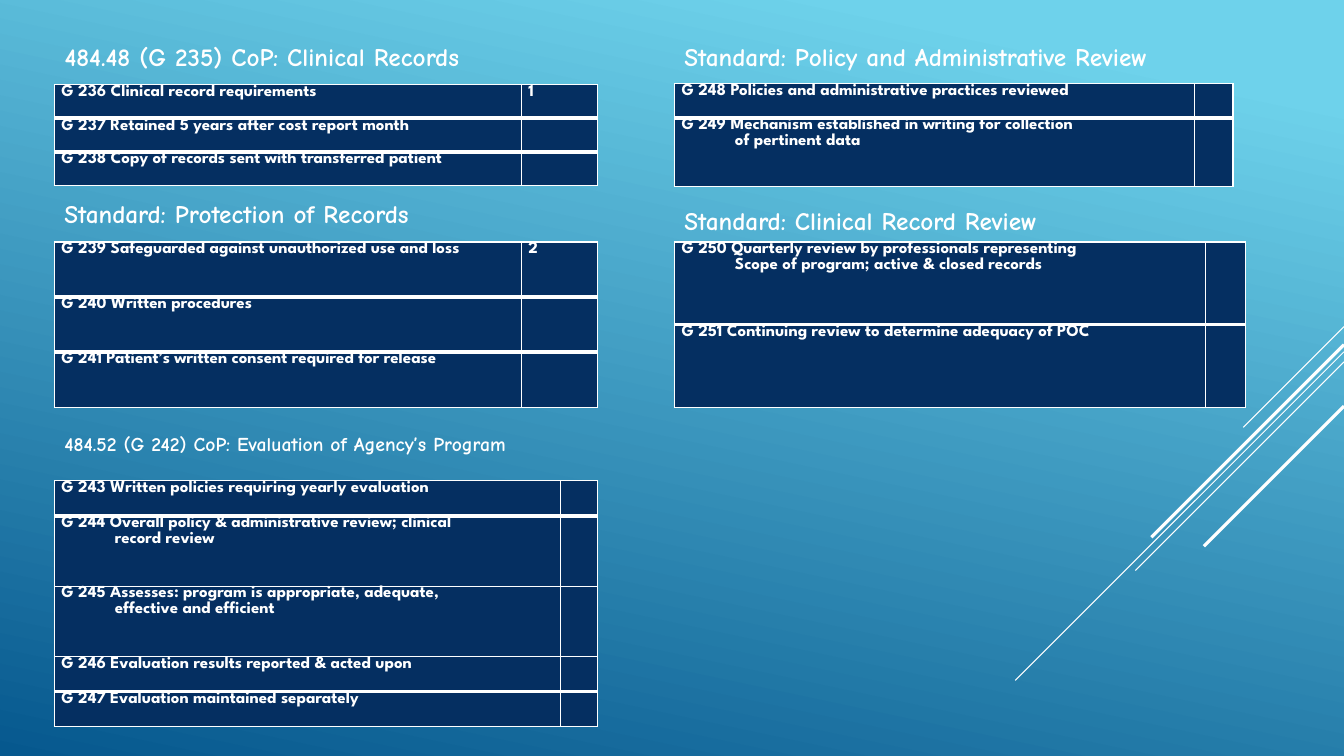
from lxml.etree import SubElement
from pptx import Presentation
from pptx.dml.color import RGBColor
from pptx.enum.shapes import MSO_CONNECTOR
from pptx.enum.text import MSO_ANCHOR, MSO_AUTO_SIZE, PP_ALIGN
from pptx.oxml.ns import qn
from pptx.util import Inches, Pt

COLORS = {"white": "FFFFFF", "navy": "052F61", "sky": "6ED2EB", "deep": "06588E"}
LEFT, RIGHT = 0.54, 6.69
CONTINUATION_INDENT = 0.53

# heading, size, heading box, table box, score column width,
# relative row heights, rows followed by a heavy rule, (requirement, score) rows
SECTIONS = [
    ("484.48 (G 235) CoP: Clinical Records", 18, (LEFT, 0.36, 4.77, 0.4),
     (LEFT, 0.84, 5.39, 1), 0.76, (1, 1, 1), {0, 1},
     [("G 236 Clinical record requirements", "1"),
      ("G 237 Retained 5 years after cost report month", ""),
      ("G 238 Copy of records sent with transferred patient", "")]),
    ("Standard: Protection of Records", 18, (LEFT, 1.92, 4.22, 0.4),
     (LEFT, 2.4, 5.39, 1.64), 0.76, (1, 1, 1), {0, 1},
     [("G 239 Safeguarded against unauthorized use and loss", "2"),
      ("G 240 Written procedures", ""),
      ("G 241 Patient’s written consent required for release", "")]),
    ("484.52 (G 242) CoP: Evaluation of Agency’s Program", 14, (LEFT, 4.24, 5.26, 0.34),
     (LEFT, 4.77, 5.39, 2.44), 0.37, (1, 2, 2, 1, 1), {0, 3},
     [("G 243 Written policies requiring yearly evaluation", ""),
      ("G 244 Overall policy & administrative review; clinical\nrecord review", ""),
      ("G 245 Assesses: program is appropriate, adequate,\neffective and efficient", ""),
      ("G 246 Evaluation results reported & acted upon", ""),
      ("G 247 Evaluation maintained separately", "")]),
    ("Standard: Policy and Administrative Review", 18, (RIGHT, 0.36, 5.54, 0.4),
     (RIGHT, 0.83, 5.54, 1.02), 0.38, (1, 2), {0},
     [("G 248 Policies and administrative practices reviewed", ""),
      ("G 249 Mechanism established in writing for collection\nof pertinent data", "")]),
    ("Standard: Clinical Record Review", 18, (RIGHT, 1.99, 4.24, 0.4),
     (RIGHT, 2.4, 5.66, 1.64), 0.39, (1, 1), {0},
     [("G 250 Quarterly review by professionals representing\n"
       "Scope of program; active & closed records", ""),
      ("G 251 Continuing review to determine adequacy of POC", "")]),
]

# Diagonals from the right edge: start height, horizontal run, width in points
DIAGONALS = [(3.24, 1, 0.75), (3.49, 3.26, 0.75), (3.59, 2.07, 0.75),
             (3.42, 1.91, 2.25), (4.03, 1.39, 2.25)]


class SlideBuilder:
    heading_font = "Comic Neue"
    table_font = "League Spartan"

    def __init__(self, slide):
        self.slide = slide

    def color(self, name):
        return RGBColor.from_string(COLORS[name])

    def background(self):
        fill = self.slide.background.fill
        fill.gradient()
        fill.gradient_angle = 258
        for stop, (position, name) in zip(fill.gradient_stops, [(0.1, "sky"), (1, "deep")]):
            stop.position = position
            stop.color.rgb = self.color(name)

    def diagonal(self, top, run, width):
        edge = 13.33
        diagonal = self.slide.shapes.add_connector(
            MSO_CONNECTOR.STRAIGHT, Inches(edge), Inches(top),
            Inches(edge - run), Inches(top + run))
        diagonal.line.color.rgb = self.color("white")
        diagonal.line.width = Pt(width)
        SubElement(diagonal._element.spPr, qn("a:effectLst"))

    def style(self, paragraph, font_name, size):
        paragraph.alignment = PP_ALIGN.LEFT
        font = paragraph.font
        font.name, font.size, font.bold = font_name, Pt(size), True
        font.color.rgb = self.color("white")

    def heading(self, text, size, box, is_title):
        shapes = self.slide.shapes
        lengths = [Inches(v) for v in box]
        heading = shapes.title if is_title else shapes.add_textbox(*lengths)
        heading.left, heading.top, heading.width, heading.height = lengths
        frame = heading.text_frame
        frame.text = text
        frame.word_wrap = False
        frame.auto_size = MSO_AUTO_SIZE.SHAPE_TO_FIT_TEXT
        frame.vertical_anchor = MSO_ANCHOR.TOP
        self.style(frame.paragraphs[0], self.heading_font, size)

    def cell(self, cell, text, top_rule, bottom_rule):
        cell.margin_left = cell.margin_right = Inches(0.07)
        cell.margin_top = cell.margin_bottom = 0
        cell.text_frame.text = text
        for index, paragraph in enumerate(cell.text_frame.paragraphs):
            self.style(paragraph, self.table_font, 12)
            if index:
                paragraph._p.get_or_add_pPr().set("marL", str(Inches(CONTINUATION_INDENT)))
        # Borders precede the fill in the cell properties
        properties = cell._tc.get_or_add_tcPr()
        for side, width in [("lnL", 1), ("lnR", 1), ("lnT", top_rule), ("lnB", bottom_rule)]:
            border = SubElement(properties, qn(f"a:{side}"), w=str(Pt(width)))
            solid = SubElement(border, qn("a:solidFill"))
            SubElement(solid, qn("a:srgbClr"), val=COLORS["white"])
        cell.fill.solid()
        cell.fill.fore_color.rgb = self.color("navy")

    def table(self, box, score_width, weights, heavy, rows):
        left, top, width, height = box
        table = self.slide.shapes.add_table(
            len(rows), 2, *[Inches(v) for v in box]).table
        table.first_row = table.horz_banding = False
        table.columns[0].width = Inches(width - score_width)
        table.columns[1].width = Inches(score_width)
        for r, (weight, row) in enumerate(zip(weights, rows)):
            table.rows[r].height = Inches(height * weight / sum(weights))
            top_rule = 3 if r - 1 in heavy else 1
            bottom_rule = 3 if r in heavy else 1
            for c, text in enumerate(row):
                self.cell(table.cell(r, c), text, top_rule, bottom_rule)


def main():
    presentation = Presentation()
    presentation.slide_width, presentation.slide_height = Inches(13.33), Inches(7.5)
    title_only = presentation.slide_layouts[5]
    builder = SlideBuilder(presentation.slides.add_slide(title_only))

    # Backdrop
    builder.background()
    for diagonal in DIAGONALS:
        builder.diagonal(*diagonal)

    # Headed tables
    for index, (heading, size, heading_box, *requirements) in enumerate(SECTIONS):
        builder.heading(heading, size, heading_box, is_title=index == 0)
        builder.table(*requirements)

    presentation.save("out.pptx")


if __name__ == "__main__":
    main()
